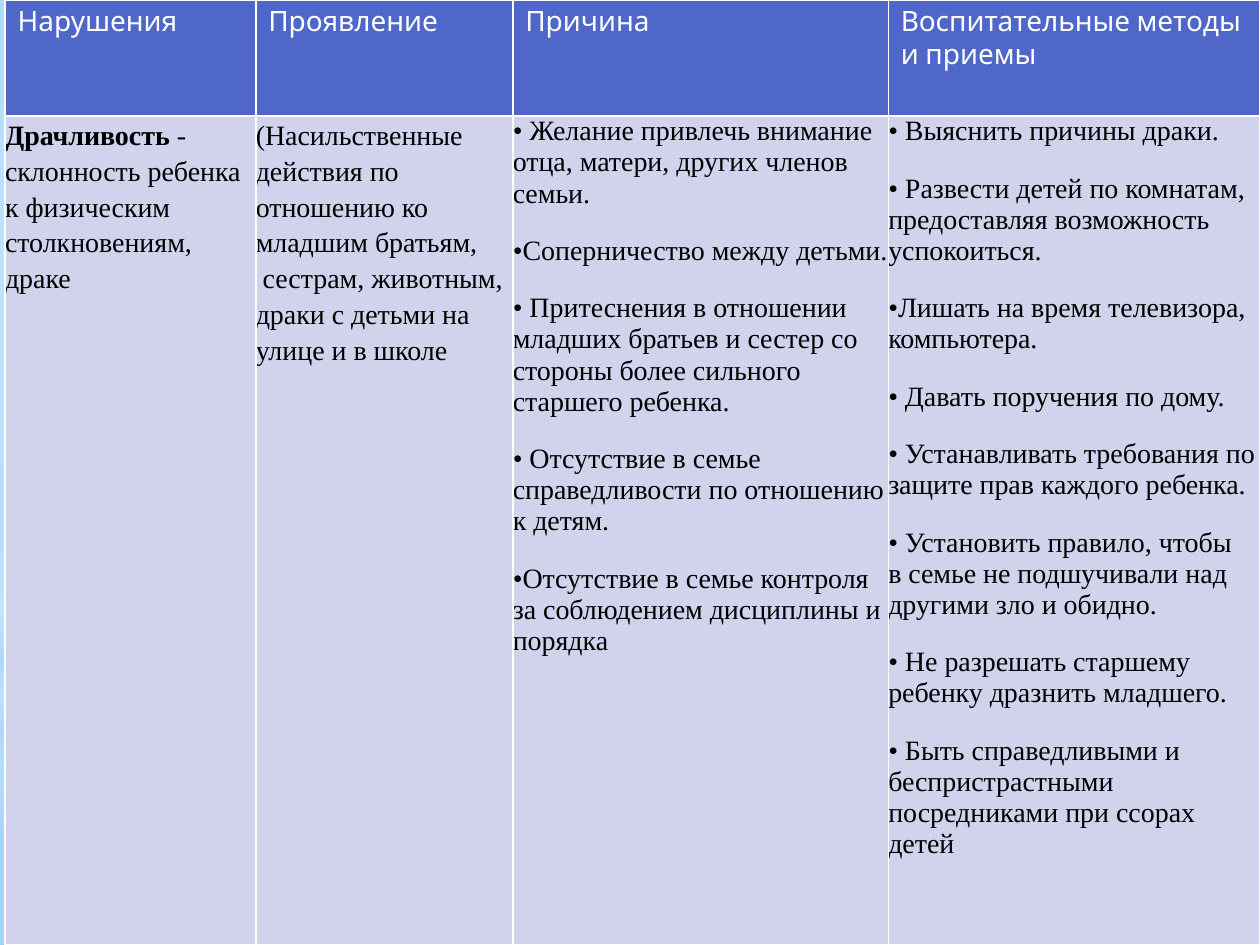
import pptx
import pptx.util
import pptx.dml.color
import pptx.enum.shapes
import pptx.oxml
import pptx.oxml.ns
from dataclasses import dataclass
from lxml import etree

Inches = pptx.util.Inches
Pt = pptx.util.Pt
qn = pptx.oxml.ns.qn


def color(value):
    return pptx.dml.color.RGBColor.from_string(value)


@dataclass(frozen=True)
class Theme:
    header_fill: str = "4E67C8"
    body_fill: str = "D0D3EB"
    light: str = "FFFFFF"
    dark: str = "000000"
    haze: str = "B4DCFA"
    sky: str = "9ED5FF"
    sky_edge: str = "5BB9FF"
    header_font: str = "Karla"
    body_font: str = "Times New Roman"
    text_size: float = 16
    paragraph_gap: float = 7.5
    loose_spacing: float = 1.15


THEME = Theme()
CENTER = (50, 50, 50, 50)
SKY_STOPS = [(0, THEME.sky, 100), (60, THEME.light, 100), (100, THEME.sky_edge, 100)]
SKY_FOCUS = (20, 10, 20, 60)
HAZE_BANDS = [
    (5.58, 1.92, CENTER,
     [(0, THEME.light, 91), (37, THEME.light, 76), (100, THEME.haze, 79)]),
    (0, 5.58, CENTER,
     [(0, THEME.light, 89), (48, THEME.light, 62), (100, THEME.haze, 79)]),
    (4.12, 2.5, None,
     [(0, THEME.light, 0), (29, THEME.light, 30), (45, THEME.haze, 40),
      (55, THEME.light, 26), (65, THEME.haze, 60), (100, THEME.light, 0)]),
]
COLUMN_WIDTHS = [1.99, 2.04, 2.98, 2.95]
HEADER_HEIGHT = 0.92
HEADERS = ["Нарушения", "Проявление", "Причина", "Воспитательные методы и приемы"]
BEHAVIOUR = "Драчливость"
DEFINITION = " - склонность ребенка к физическим столкновениям, драке"
COLUMN_TEXTS = [
    [BEHAVIOUR + DEFINITION],
    ["(Насильственные действия по отношению ко младшим братьям, \u00a0сестрам, "
     "животным, драки с детьми на улице и в школе"],
    ["• Желание привлечь внимание отца, матери, других членов семьи.",
     "•Соперничество между детьми.",
     "• Притеснения в отношении младших братьев и сестер со стороны более сильного старшего ребенка.",
     "• Отсутствие в семье справедливости по отношению к детям.",
     "•Отсутствие в семье контроля за соблюдением дисциплины и порядка"],
    ["• Выяснить причины драки.",
     "• Развести детей по комнатам, предоставляя возможность успокоиться.",
     "•Лишать на время телевизора, компьютера.",
     "• Давать поручения по дому.",
     "• Устанавливать требования по защите прав каждого ребенка.",
     "• Установить правило, чтобы в\u00a0семье не подшучивали над другими зло и обидно.",
     "• Не разрешать старшему ребенку дразнить младшего.",
     "• Быть справедливыми и беспристрастными посредниками при ссорах детей"],
]


def add_node(parent, tag, **attributes):
    values = {name: str(value) for name, value in attributes.items()}
    return etree.SubElement(parent, qn(f"a:{tag}"), values)


def paint_gradient(fill, owner, stops, focus):
    fill.gradient()
    gradient = next(owner.iter(qn("a:gradFill")))
    for child in list(gradient):
        gradient.remove(child)
    stop_list = add_node(gradient, "gsLst")
    for position, value, opacity in stops:
        stop = add_node(stop_list, "gs", pos=position * 1000)
        add_node(add_node(stop, "srgbClr", val=value), "alpha", val=opacity * 1000)
    if focus is None:
        add_node(gradient, "lin", ang=90 * 60000, scaled=0)
    else:
        circle = add_node(gradient, "path", path="circle")
        sides = {side: amount * 1000 for side, amount in zip("ltrb", focus)}
        add_node(circle, "fillToRect", **sides)


def add_sky(page, left, top, width):
    paint_gradient(page.background.fill, page._element, SKY_STOPS, SKY_FOCUS)
    for offset, height, focus, stops in HAZE_BANDS:
        band = page.shapes.add_shape(
            pptx.enum.shapes.MSO_SHAPE.RECTANGLE,
            left, top + Inches(offset), width, Inches(height))
        band.shadow.inherit = False
        band.line.fill.background()
        paint_gradient(band.fill, band._element, stops, focus)


def style_cell(cell, fill):
    properties = cell._tc.get_or_add_tcPr()
    for side in ("lnL", "lnR", "lnT", "lnB"):
        line = add_node(properties, side, w=Pt(1))
        add_node(add_node(line, "solidFill"), "srgbClr", val=THEME.light)
    cell.fill.solid()
    cell.fill.fore_color.rgb = color(fill)


def style_font(para, name, value):
    para.font.name = name
    para.font.size = Pt(THEME.text_size)
    para.font.color.rgb = color(value)


def fill_header(cell, text):
    style_cell(cell, THEME.header_fill)
    cell.text = text
    para = cell.text_frame.paragraphs[0]
    style_font(para, THEME.header_font, THEME.light)
    para.font.bold = False


def fill_body(cell, texts):
    style_cell(cell, THEME.body_fill)
    cell.margin_left = cell.margin_right = cell.margin_top = cell.margin_bottom = 0
    cell.text = "\n".join(texts)
    for para in cell.text_frame.paragraphs:
        style_font(para, THEME.body_font, THEME.dark)
        para.space_before = para.space_after = Pt(THEME.paragraph_gap)
        if len(texts) == 1:
            para.line_spacing = THEME.loose_spacing


def emphasize_behaviour(cell):
    para = cell.text_frame.paragraphs[0]
    term = para.runs[0]
    term.text = BEHAVIOUR
    term.font.bold = True
    para.add_run().text = DEFINITION


def add_behaviour_table(page, left, top, width, height):
    frame = page.shapes.add_table(2, len(HEADERS), left, top, width, height)
    table = frame.table
    for column, column_width in zip(table.columns, COLUMN_WIDTHS):
        column.width = Inches(column_width)
    table.rows[0].height = Inches(HEADER_HEIGHT)
    table.rows[1].height = height - Inches(HEADER_HEIGHT)
    for index, (header, texts) in enumerate(zip(HEADERS, COLUMN_TEXTS)):
        fill_header(table.cell(0, index), header)
        fill_body(table.cell(1, index), texts)
    emphasize_behaviour(table.cell(1, 0))


def main():
    deck = pptx.Presentation()
    deck.slide_width = Inches(10)
    deck.slide_height = Inches(7.5)
    page = deck.slides.add_slide(deck.slide_layouts[6])
    add_sky(page, Inches(0), Inches(0), deck.slide_width)
    add_behaviour_table(page, Inches(0.04), Inches(0), Inches(9.96), Inches(7.5))
    deck.save("out.pptx")


if __name__ == "__main__":
    main()
